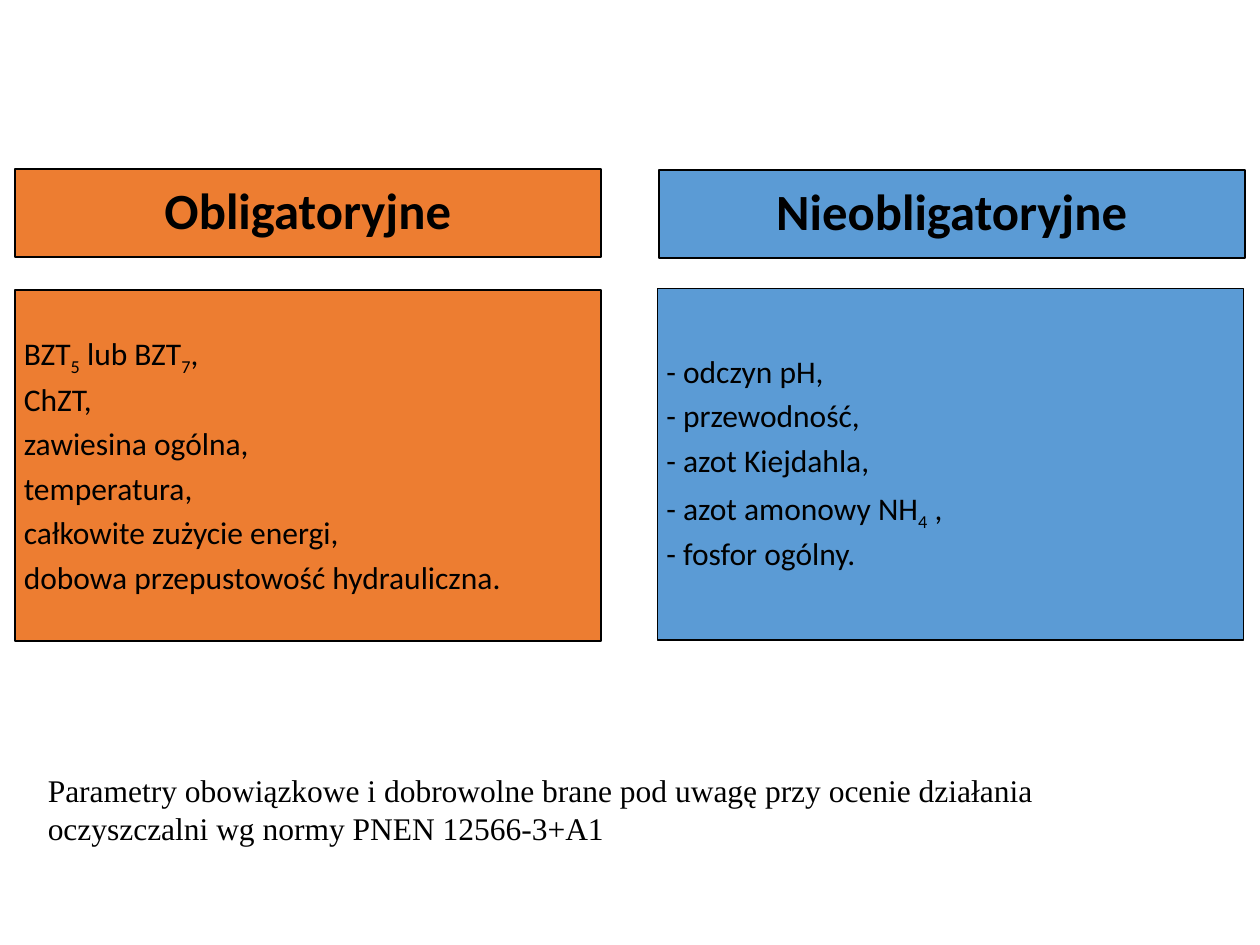
from dataclasses import dataclass

import pptx
import pptx.dml.color
import pptx.enum.shapes
import pptx.enum.text
import pptx.util

Pt = pptx.util.Pt
PP_ALIGN = pptx.enum.text.PP_ALIGN
ANCHOR = pptx.enum.text.MSO_ANCHOR

BLACK, ORANGE, BLUE = "000000", "ED7D31", "5B9BD5"
PANEL_WIDTH, HEADING_HEIGHT, LIST_HEIGHT = 334.8, 50.4, 200.9
SUBSCRIPT_MARK = "|"  # encloses the characters set as subscript

HEADING_FONT = {"name": "Calibri", "size": Pt(29), "bold": True}
LIST_FONT = {"name": "Calibri", "size": Pt(18), "bold": False}
CAPTION_FONT = {"name": "Times New Roman", "size": Pt(18), "bold": False}
PANEL_SPACING = {"line_spacing": 0.9, "space_after": Pt(6)}
HEADING_PARAGRAPH = {**PANEL_SPACING, "alignment": PP_ALIGN.CENTER, "space_after": Pt(10)}
LIST_PARAGRAPH = {**PANEL_SPACING, "alignment": PP_ALIGN.LEFT}


@dataclass
class Panel:
    left: float
    top: float
    height: float
    color: str
    inset: float
    lines: list[str]
    font: dict
    paragraph: dict


PANELS = [
    Panel(8.6, 96.5, HEADING_HEIGHT, ORANGE, 8.6, ["Obligatoryjne"],
          HEADING_FONT, HEADING_PARAGRAPH),
    Panel(376.6, 97.2, HEADING_HEIGHT, BLUE, 8.6, ["Nieobligatoryjne"],
          HEADING_FONT, HEADING_PARAGRAPH),
    Panel(8.6, 165.6, LIST_HEIGHT, ORANGE, 5,
          ["BZT|5| lub BZT|7|,", "ChZT,", "zawiesina ogólna,", "temperatura,",
           "całkowite zużycie energi,", "dobowa przepustowość hydrauliczna."],
          LIST_FONT, LIST_PARAGRAPH),
    Panel(375.8, 164.9, LIST_HEIGHT, BLUE, 5,
          ["- odczyn pH,", "- przewodność,", "- azot Kiejdahla,",
           "- azot amonowy NH|4| ,", "- fosfor ogólny."],
          LIST_FONT, LIST_PARAGRAPH),
]
CAPTION = ("Parametry obowiązkowe i dobrowolne brane pod uwagę przy ocenie działania "
           "oczyszczalni wg normy PNEN 12566-3+A1")


def rgb(color: str) -> pptx.dml.color.RGBColor:
    return pptx.dml.color.RGBColor.from_string(color)


def apply_format(target, values: dict) -> None:
    for attribute, value in values.items():
        setattr(target, attribute, value)


def write_lines(frame, lines: list[str], font: dict, paragraph_format: dict) -> None:
    for index, line in enumerate(lines):
        paragraph = frame.add_paragraph() if index else frame.paragraphs[0]
        apply_format(paragraph, paragraph_format)
        for position, part in enumerate(line.split(SUBSCRIPT_MARK)):
            run = paragraph.add_run()
            run.text = part
            apply_format(run.font, font)
            run.font.color.rgb = rgb(BLACK)
            if position % 2:
                run._r.get_or_add_rPr().set("baseline", "-25000")


def draw_panel(slide, panel: Panel) -> None:
    box = slide.shapes.add_shape(
        pptx.enum.shapes.MSO_SHAPE.RECTANGLE,
        Pt(panel.left), Pt(panel.top), Pt(PANEL_WIDTH), Pt(panel.height))
    box.shadow.inherit = False
    box.fill.solid()
    box.fill.fore_color.rgb = rgb(panel.color)
    box.line.color.rgb = rgb(BLACK)
    box.line.width = Pt(1)
    margins = {f"margin_{side}": Pt(panel.inset)
               for side in ("left", "top", "right", "bottom")}
    apply_format(box.text_frame, {
        **margins, "word_wrap": True, "vertical_anchor": ANCHOR.MIDDLE})
    write_lines(box.text_frame, panel.lines, panel.font, panel.paragraph)


def draw_caption(slide) -> None:
    caption = slide.shapes.add_textbox(Pt(20.2), Pt(437), Pt(668.9), Pt(51))
    apply_format(caption.text_frame, {
        "word_wrap": True,
        "auto_size": pptx.enum.text.MSO_AUTO_SIZE.SHAPE_TO_FIT_TEXT})
    write_lines(caption.text_frame, [CAPTION], CAPTION_FONT, {"alignment": PP_ALIGN.LEFT})


def main() -> None:
    deck = pptx.Presentation()
    apply_format(deck, {"slide_width": Pt(720), "slide_height": Pt(540)})
    slide = deck.slides.add_slide(deck.slide_layouts[6])  # blank: no title here

    # Headings above their parameter lists
    for panel in PANELS:
        draw_panel(slide, panel)

    # Caption below the panels
    draw_caption(slide)
    deck.save("out.pptx")


if __name__ == "__main__":
    main()
